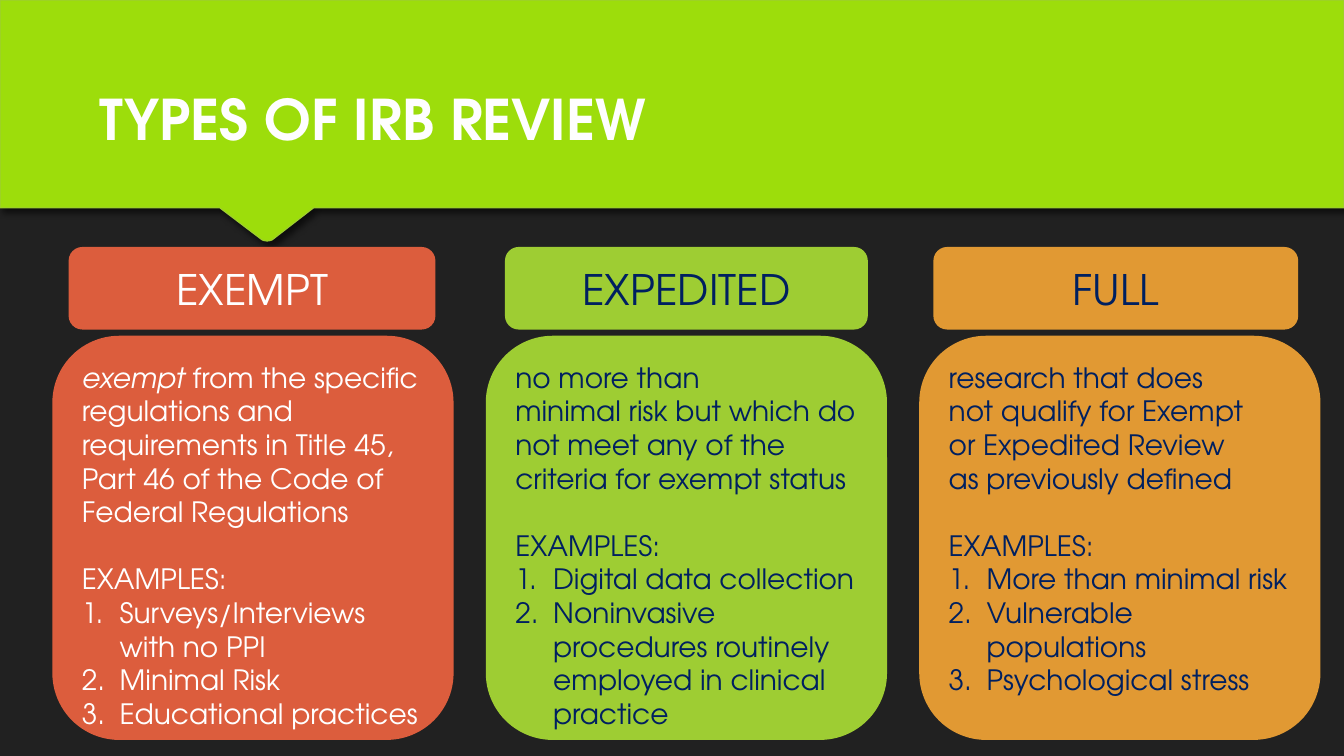
from lxml import etree
from pptx import Presentation
from pptx.dml.color import RGBColor
from pptx.enum.shapes import MSO_SHAPE
from pptx.enum.text import MSO_ANCHOR, PP_ALIGN
from pptx.oxml.ns import qn
from pptx.util import Pt

ROUND = MSO_SHAPE.ROUNDED_RECTANGLE
TOP, MIDDLE, BOTTOM = MSO_ANCHOR.TOP, MSO_ANCHOR.MIDDLE, MSO_ANCHOR.BOTTOM
LEFT, CENTER = PP_ALIGN.LEFT, PP_ALIGN.CENTER

WIDTH, HEIGHT = 960, 540
FONT = "TeX Gyre Adventor"
DARK, LIME, GREEN = "212121", "9DDD0B", "9ECD33"
RED, AMBER = "DC5D3D", "E19933"
WHITE, NAVY = "FFFFFF", "002060"

BANNER = [(WIDTH, 0), (0, 0), (0, 148.5), (157, 148.5), (187.2, 171.4),
          (188.6, 171.9), (190.8, 172.2), (192.9, 171.9), (194.4, 171.4),
          (224, 148.5), (WIDTH, 148.5)]

# Header left and width, fill, ink, heading, summary runs, examples.
# A tilde marks a space that must not break.
CARDS = [
    (49, 262, RED, WHITE, "EXEMPT",
     [("exempt", True),
      (" from the specific regulations and requirements in Title 45, "
       "Part 46 of the Code of Federal Regulations", False)],
     ["Surveys/Interviews with no PPI", "Minimal Risk",
      "Educational~practices"]),
    (360.7, 259.2, GREEN, NAVY, "EXPEDITED",
     [("no more than minimal~risk but which do not~meet any of the "
       "criteria~for exempt status", False)],
     ["Digital data~collection",
      "Noninvasive procedures~routinely employed~in clinical practice"]),
    (666.7, 260.6, AMBER, NAVY, "FULL",
     [("research that does not~qualify for Exempt or~Expedited Review "
       "as~previously defined", False)],
     ["More than minimal~risk", "Vulnerable populations",
      "Psychological stress"]),
]
BODY_LEFT, BODY_STEP, BODY_SIDE = 37.4, 309.6, 286.6


def color(text):
    return RGBColor.from_string(text)


def cast(effects, blur, gap, angle, alpha):
    """Put an outer shadow into an effect list."""
    drop = etree.SubElement(effects, qn("a:outerShdw"), blurRad=str(Pt(blur)),
                            dist=str(Pt(gap)), dir=str(angle * 60000),
                            algn="tl", rotWithShape="0")
    tint = etree.SubElement(drop, qn("a:srgbClr"), val="000000")
    etree.SubElement(tint, qn("a:alpha"), val=str(alpha * 1000))


class Deck:
    def __init__(self, font):
        self.font = font
        self.file = Presentation()
        self.file.slide_width, self.file.slide_height = Pt(WIDTH), Pt(HEIGHT)
        self.slide = self.file.slides.add_slide(self.file.slide_layouts[6])

    def back(self, fill):
        ground = self.slide.background.fill
        ground.solid()
        ground.fore_color.rgb = color(fill)

    def banner(self, points, fill, edge):
        spots = [(Pt(x), Pt(y)) for x, y in points]
        pen = self.slide.shapes.build_freeform(*spots[0], scale=1.0)
        pen.add_line_segments(spots[1:], close=True)
        shape = pen.convert_to_shape()
        shape.fill.solid()
        shape.fill.fore_color.rgb = color(fill)
        shape.line.color.rgb = color(edge)
        shape.line.width = Pt(0.75)
        shape.shadow.inherit = False
        cast(shape._element.spPr.find(qn("a:effectLst")), 4, 3, 45, 60)

    def panel(self, x, y, wide, high, fill, anchor):
        """Add a rounded box and return its text frame."""
        shape = self.slide.shapes.add_shape(ROUND, Pt(x), Pt(y), Pt(wide), Pt(high))
        shape.fill.solid()
        shape.fill.fore_color.rgb = color(fill)
        shape.line.fill.background()
        shape.shadow.inherit = False
        return self.frame(shape, anchor)

    def box(self, x, y, wide, high, anchor):
        """Add a text box and return its text frame."""
        shape = self.slide.shapes.add_textbox(Pt(x), Pt(y), Pt(wide), Pt(high))
        return self.frame(shape, anchor)

    def frame(self, shape, anchor):
        text = shape.text_frame
        text.word_wrap = True
        text.vertical_anchor = anchor
        return text

    def line(self, frame, align=LEFT, before=0):
        """Return the first paragraph if it is empty, else a new one."""
        para = frame.paragraphs[0]
        if para.runs:
            para = frame.add_paragraph()
        para.alignment = align
        para.space_before = Pt(before)
        return para

    def run(self, para, text, size, ink, bold=False, italic=False):
        run = para.add_run()
        run.text = text.replace("~", chr(160))
        font = run.font
        font.name, font.size = self.font, Pt(size)
        font.bold, font.italic = bold, italic
        font.color.rgb = color(ink)
        return run

    def number(self, para, indent):
        props = para._p.get_or_add_pPr()
        props.set("marL", str(Pt(indent)))
        props.set("indent", str(-Pt(indent)))
        etree.SubElement(props, qn("a:buFont"), typeface="+mj-lt")
        etree.SubElement(props, qn("a:buAutoNum"), type="arabicPeriod")

    def title(self, text):
        para = self.line(self.box(64.1, 35.3, 832.3, 76.3, BOTTOM))
        run = self.run(para, text, 40, "FEFEFE", bold=True)
        effects = etree.Element(qn("a:effectLst"))
        run._r.rPr.find(qn("a:solidFill")).addnext(effects)
        cast(effects, 4, 3, 45, 60)

    def card(self, index, left, wide, fill, ink, head, summary, samples):
        top = self.panel(left, 176.4, wide, 59, fill, MIDDLE)
        self.run(self.line(top, CENTER), head, 30, ink)

        x = BODY_LEFT + index * BODY_STEP
        body = self.panel(x, 239.8, BODY_SIDE, 288.7, fill, TOP)
        para = self.line(body)
        for text, italic in summary:
            self.run(para, text, 20, ink, italic=italic)
        self.run(self.line(body, before=24), "EXAMPLES:", 20, ink)
        for sample in samples:
            para = self.line(body)
            self.number(para, 27)
            self.run(para, sample, 20, ink)


def main():
    deck = Deck(FONT)
    deck.back(DARK)
    deck.banner(BANNER, LIME, GREEN)
    deck.title("TYPES OF IRB REVIEW")
    for index, card in enumerate(CARDS):
        deck.card(index, *card)
    deck.file.save("out.pptx")


if __name__ == "__main__":
    main()
